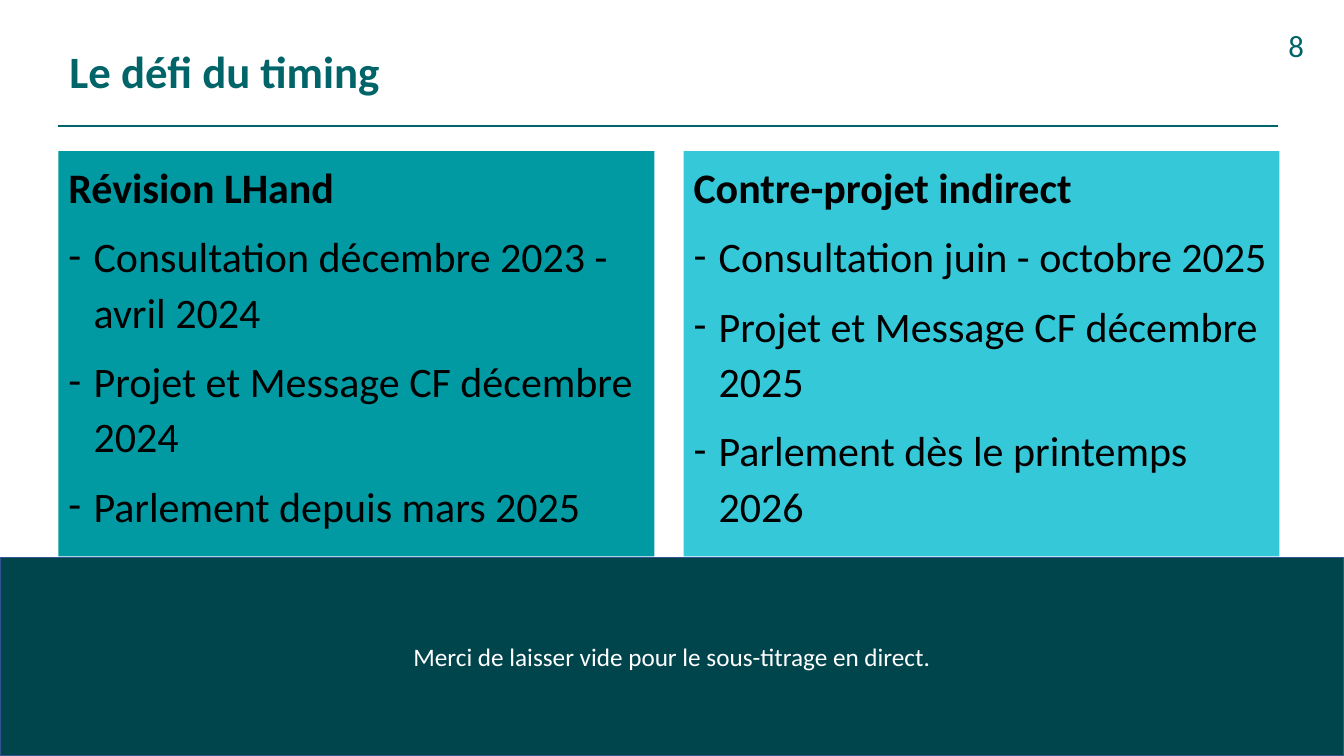
import pptx
import pptx.dml.color
import pptx.enum.shapes
import pptx.enum.text
import pptx.oxml.ns
import pptx.util
from lxml import etree

Inches = pptx.util.Inches
Pt = pptx.util.Pt
RGBColor = pptx.dml.color.RGBColor
ALIGN = pptx.enum.text.PP_ALIGN
ANCHOR = pptx.enum.text.MSO_ANCHOR
qn = pptx.oxml.ns.qn

WHITE = RGBColor(0xFF, 0xFF, 0xFF)
BLACK = RGBColor(0x00, 0x00, 0x00)
PETROL = RGBColor(0x01, 0x64, 0x69)
DARK_PETROL = RGBColor(0x00, 0x44, 0x4C)
TEAL = RGBColor(0x02, 0x9A, 0xA2)
TURQUOISE = RGBColor(0x34, 0xC8, 0xD8)
BLUE = RGBColor(0x32, 0x54, 0x91)

MARGIN = 0.58
PANEL_WIDTH = 5.91
PANEL_STEP = 6.2
PANELS = [
    (TEAL, "Révision LHand", [
        "Consultation décembre 2023 - avril 2024",
        "Projet et Message CF décembre 2024",
        "Parlement depuis mars 2025",
    ]),
    (TURQUOISE, "Contre-projet indirect", [
        "Consultation juin - octobre 2025",
        "Projet et Message CF décembre 2025",
        "Parlement dès le printemps 2026",
    ]),
]
PANEL_SPACING = {"line_spacing": 1.1, "space_before": Pt(10), "alignment": ALIGN.LEFT}


def apply_format(target, values):
    for attribute, value in values.items():
        setattr(target, attribute, value)


def write(paragraph, text, size, color, bold=False, spacing=None):
    run = paragraph.add_run()
    run.text = text
    apply_format(run.font, {"name": "Calibri", "size": Pt(size), "bold": bold})
    run.font.color.rgb = color
    apply_format(paragraph, spacing or {})


def add_dash(paragraph):
    properties = paragraph._p.get_or_add_pPr()
    properties.set("marL", str(Inches(0.25)))
    properties.set("indent", str(-Inches(0.25)))
    etree.SubElement(properties, qn("a:buFont")).set("typeface", "Calibri")
    etree.SubElement(properties, qn("a:buChar")).set("char", "-")


def add_block(slide, box, fill, anchor, outline=None):
    block = slide.shapes.add_shape(
        pptx.enum.shapes.MSO_SHAPE.RECTANGLE, *map(Inches, box))
    block.shadow.inherit = False
    block.fill.solid()
    block.fill.fore_color.rgb = fill
    if outline is None:
        block.line.fill.background()
    else:
        block.line.color.rgb = outline
        block.line.width = Pt(1)
    apply_format(block.text_frame, {"word_wrap": True, "vertical_anchor": anchor})
    return block.text_frame


def add_label(slide, box, text, size, anchor, bold=False, spacing=None):
    label = slide.shapes.add_textbox(*map(Inches, box)).text_frame
    apply_format(label, {"word_wrap": True, "vertical_anchor": anchor})
    write(label.paragraphs[0], text, size, PETROL, bold, spacing)


def add_rule(slide, left, right, top):
    rule = slide.shapes.add_connector(
        pptx.enum.shapes.MSO_CONNECTOR.STRAIGHT,
        Inches(left), Inches(top), Inches(right), Inches(top))
    rule.line.color.rgb = PETROL
    rule.line.width = Pt(1.2)
    etree.SubElement(rule._element.spPr, qn("a:effectLst"))


def add_panel(slide, left, fill, heading, steps):
    panel = add_block(slide, (left, 1.5, PANEL_WIDTH, 4.02), fill, ANCHOR.TOP)
    write(panel.paragraphs[0], heading, 30, BLACK, True, PANEL_SPACING)
    for step in steps:
        paragraph = panel.add_paragraph()
        write(paragraph, step, 30, BLACK, spacing=PANEL_SPACING)
        add_dash(paragraph)


def main():
    deck = pptx.Presentation()
    apply_format(deck, {"slide_width": Inches(13.33), "slide_height": Inches(7.5)})
    slide = deck.slides.add_slide(deck.slide_layouts[6])

    caption_area = add_block(
        slide, (0, 5.53, 13.33, 1.97), DARK_PETROL, ANCHOR.MIDDLE, BLUE)
    write(caption_area.paragraphs[0],
          "Merci de laisser vide pour le sous-titrage en direct.",
          18, WHITE, spacing={"alignment": ALIGN.CENTER})

    add_rule(slide, MARGIN, 12.68, 1.25)
    add_label(slide, (0.59, 0.22, 12.09, 1.03), "Le défi du timing", 32,
              ANCHOR.MIDDLE, True, {"line_spacing": 0.9})
    for index, (fill, heading, steps) in enumerate(PANELS):
        add_panel(slide, MARGIN + index * PANEL_STEP, fill, heading, steps)
    add_label(slide, (12.68, 0.22, 0.54, 1.03), "8", 22, ANCHOR.TOP)

    deck.save("out.pptx")


if __name__ == "__main__":
    main()
